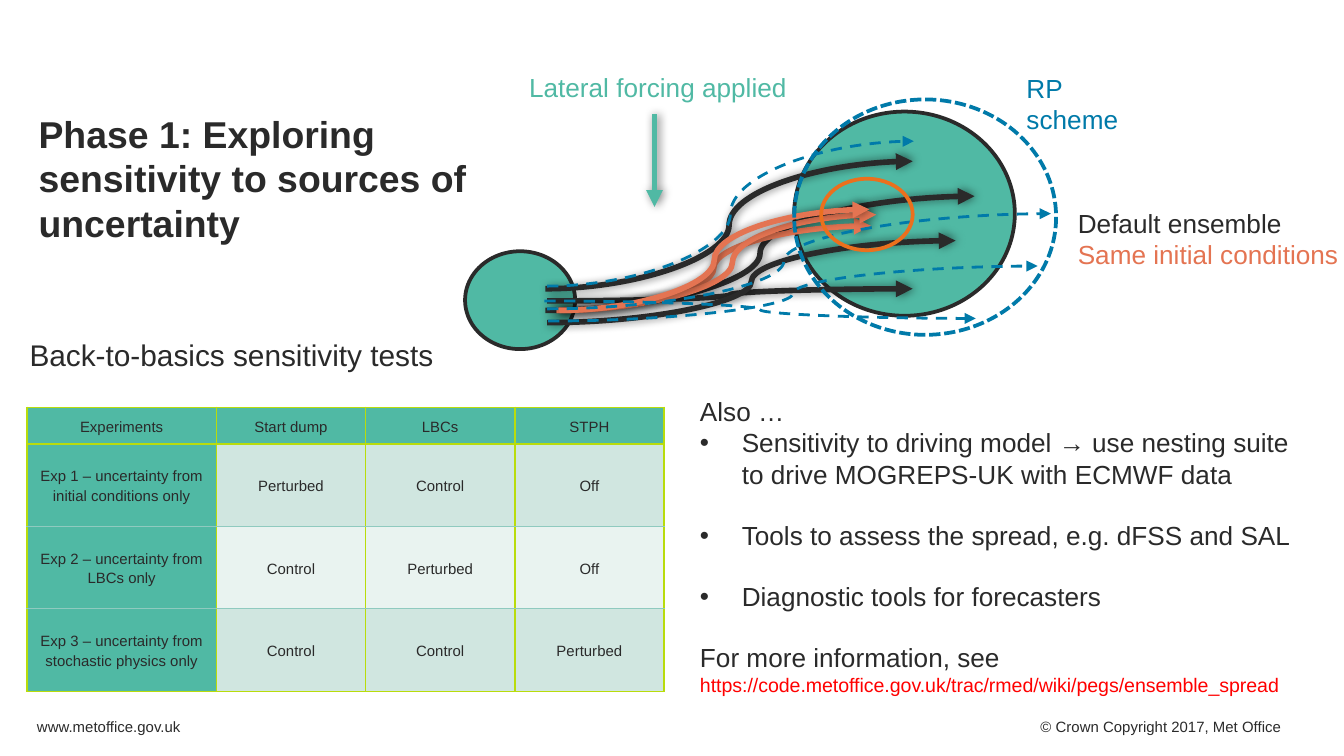
import pptx
import pptx.util
import pptx.dml.color
import pptx.enum.dml
import pptx.enum.shapes
import pptx.enum.text
import pptx.oxml.ns
from lxml import etree

Cm = pptx.util.Cm
Pt = pptx.util.Pt
RGBColor = pptx.dml.color.RGBColor
DASH = pptx.enum.dml.MSO_LINE
ANCHOR = pptx.enum.text.MSO_ANCHOR
SHAPE = pptx.enum.shapes.MSO_SHAPE
CONNECTOR = pptx.enum.shapes.MSO_CONNECTOR

WHITE = RGBColor(0xFF, 0xFF, 0xFF)
DARK = RGBColor(0x2A, 0x2A, 0x2A)
TEAL = RGBColor(0x50, 0xB9, 0xA4)
PALE = RGBColor(0xD0, 0xE6, 0xE0)
PALER = RGBColor(0xE9, 0xF3, 0xF0)
RULE = RGBColor(0x8F, 0xCA, 0xBF)
LIME = RGBColor(0xB9, 0xDC, 0x0C)
CORAL = RGBColor(0xE4, 0x74, 0x52)
ORANGE = RGBColor(0xEB, 0x70, 0x1D)
BLUE = RGBColor(0x00, 0x7A, 0xA9)
RED = RGBColor(0xFF, 0x00, 0x00)

# Content: positions in cm; paths are (start, end, bend position)
FOOTER = "www.metoffice.gov.uk\t© Crown Copyright 2017, Met Office"
STATE_ELLIPSES = [
    ((8.79, 4.75, 2.08, 1.85), TEAL, DARK, None),
    ((15.01, 2.11, 4.17, 3.86), TEAL, DARK, None),
]
SPREAD_ELLIPSES = [
    ((15.01, 1.88, 4.95, 4.45), None, BLUE, DASH.SQUARE_DOT),
    ((15.52, 3.38, 1.73, 1.35), None, ORANGE, None),
]
DEFAULT_PATHS = [
    ((10.31, 5.87), (18.42, 3.71), 0.5),
    ((10.31, 5.46), (17.25, 3.05), 0.5),
    ((10.34, 5.69), (17.25, 5.46), 0.5),
    ((10.34, 6.10), (18.06, 4.55), 0.5),
]
SAME_START_PATHS = [
    ((10.52, 5.87), (16.46, 4.27), 0.5),
    ((10.52, 5.87), (16.56, 4.06), 0.55),
    ((10.57, 5.87), (16.43, 3.96), 0.5),
]
RP_PATHS = [
    ((10.34, 5.41), (17.27, 2.67), 0.5),
    ((10.34, 5.84), (19.86, 4.04), 0.47),
    ((10.36, 6.07), (19.61, 5.03), 0.5),
    ((10.29, 5.69), (18.44, 6.02), 0.5),
]
FORCING_ARROW = ((12.37, 2.16), (12.37, 3.91), None)

# Text: box, margin, anchor, paragraphs of (text, size, colour, bold, bullet, space before)
DIAGRAM_LABELS = [
    ((9.75, 1.22, 6.58, 0.86), 0.25, ANCHOR.TOP,
     [("Lateral forcing applied", 14, TEAL, False, False, 0)]),
    ((19.15, 1.24, 2.6, 1.45), 0.25, ANCHOR.TOP,
     [("RP scheme", 14, BLUE, False, False, 0)]),
]
TEXT_BOXES = [
    ((0.53, 1.88, 8.61, 2.97), 0.2, ANCHOR.MIDDLE,
     [("Phase 1: Exploring sensitivity to sources of uncertainty", 20, DARK, True, False, 0)]),
    ((20.17, 3.71, 5.35, 1.6), 0.2, ANCHOR.MIDDLE,
     [("Default ensemble", 14, DARK, False, False, 0),
      ("Same initial conditions", 14, CORAL, False, False, 0)]),
    ((13.03, 7.21, 11.81, 6.22), 0.2, ANCHOR.MIDDLE,
     [("Also …", 14, DARK, False, False, 0),
      ("Sensitivity to driving model → use nesting suite to drive MOGREPS-UK with ECMWF data",
       14, DARK, False, True, 0),
      ("Tools to assess the spread, e.g. dFSS and SAL", 14, DARK, False, True, 16),
      ("Diagnostic tools for forecasters", 14, DARK, False, True, 16),
      ("For more information, see", 14, DARK, False, False, 16),
      ("https://code.metoffice.gov.uk/trac/rmed/wiki/pegs/ensemble_spread",
       10.5, RED, False, False, 0)]),
    ((0.36, 6.15, 8.61, 1.09), 0.2, ANCHOR.MIDDLE,
     [("Back-to-basics sensitivity tests", 16, DARK, False, False, 0)]),
]
EXPERIMENTS = [
    ("Experiments", "Start dump", "LBCs", "STPH"),
    ("Exp 1 – uncertainty from initial conditions only", "Perturbed", "Control", "Off"),
    ("Exp 2 – uncertainty from LBCs only", "Control", "Perturbed", "Off"),
    ("Exp 3 – uncertainty from stochastic physics only", "Control", "Control", "Perturbed"),
]
COLUMN_WIDTHS = [3.58, 2.82, 2.82, 2.82]
ROW_HEIGHTS = [0.69, 1.56, 1.56, 1.56]


def add_child(parent, tag, **attributes):
    return etree.SubElement(parent, pptx.oxml.ns.qn(tag), attributes)


def set_font(paragraph, size, color, bold=False):
    paragraph.font.name = "Arial"
    paragraph.font.size = Pt(size)
    paragraph.font.color.rgb = color
    paragraph.font.bold = bold


def add_ellipse(shapes, box, fill, color, dash):
    shape = shapes.add_shape(SHAPE.OVAL, *map(Cm, box))
    shape.shadow.inherit = False
    if fill is None:
        shape.fill.background()
    else:
        shape.fill.solid()
        shape.fill.fore_color.rgb = fill
    shape.line.color.rgb = color
    shape.line.width = Pt(2)
    if dash:
        shape.line.dash_style = dash


def add_arrow(shapes, path, color, width=3, dash=None, shadow=True):
    start, end, bend = path
    kind = CONNECTOR.STRAIGHT if bend is None else CONNECTOR.CURVE
    connector = shapes.add_connector(kind, *map(Cm, start + end))
    connector.line.color.rgb = color
    connector.line.width = Pt(width)
    if dash:
        connector.line.dash_style = dash
    properties = connector._element.spPr
    if bend is not None:
        guides = properties.prstGeom.get_or_add_avLst()
        add_child(guides, "a:gd", name="adj1", fmla=f"val {round(bend * 100000)}")
    add_child(connector.line._get_or_add_ln(), "a:tailEnd", type="triangle")
    effects = add_child(properties, "a:effectLst")
    if shadow:
        outer = add_child(effects, "a:outerShdw", blurRad=str(Pt(5)), dist=str(Pt(1)), dir="0")
        black = add_child(outer, "a:srgbClr", val="000000")
        add_child(black, "a:alpha", val="50000")


def add_text(shapes, box, margin, anchor, paragraphs):
    frame = shapes.add_textbox(*map(Cm, box)).text_frame
    frame.word_wrap = True
    frame.vertical_anchor = anchor
    frame.margin_left = frame.margin_right = Cm(margin)
    frame.margin_top = frame.margin_bottom = Cm(min(margin, 0.13) if anchor == ANCHOR.TOP else margin)
    for index, (text, size, color, bold, bullet, gap) in enumerate(paragraphs):
        paragraph = frame.add_paragraph() if index else frame.paragraphs[0]
        paragraph.text = text
        if gap:
            paragraph.space_before = Pt(gap)
        if bullet:
            properties = paragraph._p.get_or_add_pPr()
            properties.set("marL", str(Cm(0.79)))
            properties.set("indent", str(-Cm(0.79)))
            add_child(properties, "a:buFont", typeface="Arial")
            add_child(properties, "a:buChar", char="•")
        set_font(paragraph, size, color, bold)


def add_border(cell, side, color, width):
    line = add_child(cell._tc.get_or_add_tcPr(), f"a:ln{side}", w=str(Pt(width)))
    add_child(add_child(line, "a:solidFill"), "a:srgbClr", val=str(color))


presentation = pptx.Presentation()
presentation.slide_width = Cm(25.4)
presentation.slide_height = Cm(14.29)
slide = presentation.slides.add_slide(presentation.slide_layouts[6])

# Footer with a right-aligned tab for the copyright line
footer = slide.shapes.add_shape(SHAPE.RECTANGLE, 0, Cm(13.16), Cm(25.4), Cm(1.13))
footer.shadow.inherit = False
footer.fill.solid()
footer.fill.fore_color.rgb = WHITE
footer.line.fill.background()
footer.text_frame.margin_left = Cm(0.7)
footer.text_frame.vertical_anchor = ANCHOR.MIDDLE
paragraph = footer.text_frame.paragraphs[0]
paragraph.text = FOOTER
paragraph.alignment = pptx.enum.text.PP_ALIGN.LEFT
tabs = add_child(paragraph._p.get_or_add_pPr(), "a:tabLst")
add_child(tabs, "a:tab", pos=str(Cm(23.52)), algn="r")
set_font(paragraph, 8, DARK)

# Ensemble spread diagram
diagram = slide.shapes.add_group_shape().shapes
for ellipse in STATE_ELLIPSES:
    add_ellipse(diagram, *ellipse)
for path in DEFAULT_PATHS:
    add_arrow(diagram, path, DARK)
for path in SAME_START_PATHS:
    add_arrow(diagram, path, CORAL)
add_arrow(diagram, FORCING_ARROW, TEAL)
for path in RP_PATHS:
    add_arrow(diagram, path, BLUE, 1.5, DASH.DASH, shadow=False)
for ellipse in SPREAD_ELLIPSES:
    add_ellipse(diagram, *ellipse)
for label in DIAGRAM_LABELS:
    add_text(diagram, *label)

# Table of experiments
table = slide.shapes.add_table(
    len(ROW_HEIGHTS), len(COLUMN_WIDTHS), Cm(0.51), Cm(7.7),
    Cm(sum(COLUMN_WIDTHS)), Cm(sum(ROW_HEIGHTS))).table
table.first_row = table.horz_banding = False
for column, width in zip(table.columns, COLUMN_WIDTHS):
    column.width = Cm(width)
last = len(EXPERIMENTS) - 1
for r, values in enumerate(EXPERIMENTS):
    table.rows[r].height = Cm(ROW_HEIGHTS[r])
    for c, value in enumerate(values):
        cell = table.cell(r, c)
        cell.margin_left = cell.margin_right = Cm(0.13)
        cell.margin_top = cell.margin_bottom = 0
        cell.vertical_anchor = ANCHOR.MIDDLE
        for side in "LR":
            add_border(cell, side, LIME, 1)
        for side, lime in (("T", r < 2), ("B", r in (0, last))):
            add_border(cell, side, LIME if lime else RULE, 1 if lime else 0.5)
        cell.fill.solid()
        cell.fill.fore_color.rgb = TEAL if r == 0 or c == 0 else PALE if r % 2 else PALER
        paragraph = cell.text_frame.paragraphs[0]
        paragraph.text = value
        paragraph.alignment = pptx.enum.text.PP_ALIGN.CENTER
        paragraph.line_spacing = 1.15
        set_font(paragraph, 8, DARK)

# Title, legend and notes on the tests
for text_box in TEXT_BOXES:
    add_text(slide.shapes, *text_box)

presentation.save("out.pptx")
